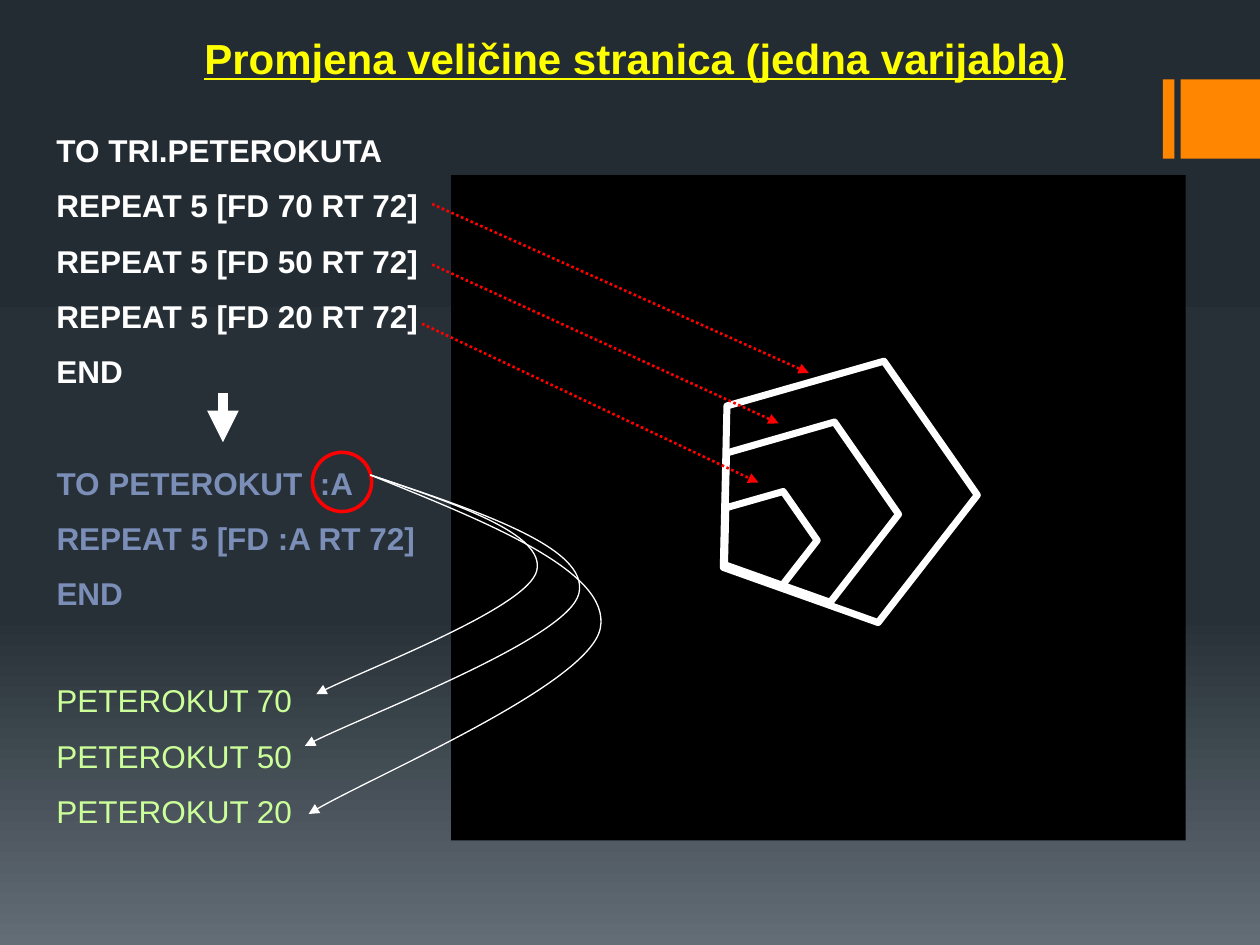
from copy import deepcopy

from pptx import Presentation
from pptx.dml.color import RGBColor
from pptx.enum.dml import MSO_LINE
from pptx.enum.shapes import MSO_CONNECTOR, MSO_SHAPE
from pptx.enum.text import MSO_AUTO_SIZE, PP_ALIGN
from pptx.oxml.ns import qn
from pptx.oxml.xmlchemy import OxmlElement
from pptx.util import Inches, Pt

RECT, OVAL, PENTAGON = MSO_SHAPE.RECTANGLE, MSO_SHAPE.OVAL, MSO_SHAPE.REGULAR_PENTAGON
STRAIGHT, DOTTED = MSO_CONNECTOR.STRAIGHT, MSO_LINE.ROUND_DOT
GROW, CENTER, LEFT = MSO_AUTO_SIZE.SHAPE_TO_FIT_TEXT, PP_ALIGN.CENTER, PP_ALIGN.LEFT

WHITE = RGBColor(0xFF, 0xFF, 0xFF)
BLACK = RGBColor(0x00, 0x00, 0x00)
RED = RGBColor(0xFF, 0x00, 0x00)
ORANGE = RGBColor(0xFF, 0x86, 0x00)
YELLOW = RGBColor(0xFF, 0xFF, 0x00)
BLUE = RGBColor(0x7B, 0x8E, 0xB8)
GREEN = RGBColor(0xCC, 0xFF, 0x99)
SKY = [(0, RGBColor(0x24, 0x2C, 0x33)), (0.65, RGBColor(0x27, 0x30, 0x37)),
       (1, RGBColor(0x63, 0x6D, 0x76))]

COLS, ROWS = 100, 75
CELL = Inches(0.1)

CODE = {"name": "Arial", "size": Pt(18), "bold": True}
CALL = {**CODE, "bold": False}
TITLE = {**CODE, "size": Pt(24), "underline": True}


def cells(*values):
    """Turn grid counts into lengths."""
    return [round(v * CELL) for v in values]


def shape(slide, kind, box, fill=None, line=None, width=0):
    """Add a preset shape in a grid box."""
    sp = slide.shapes.add_shape(kind, *cells(*box))
    sp.shadow.inherit = False
    style(sp, fill, line, width)
    return sp


def style(sp, fill, line, width):
    """Set the fill and outline, either of which may be empty."""
    for part, color in ((sp.fill, fill), (sp.line.fill, line)):
        if color is None:
            part.background()
        else:
            part.solid()
            part.fore_color.rgb = color
    if line is not None:
        sp.line.width = Pt(width)


def add_head(sp):
    """Put a triangle at the end of a line."""
    tail = OxmlElement("a:tailEnd")
    tail.set("type", "triangle")
    sp.line._get_or_add_ln().append(tail)


def arrow(slide, start, end, color, width, dash=None):
    """Add a straight arrow between two grid points."""
    cx = slide.shapes.add_connector(STRAIGHT, *cells(*start, *end))
    cx.line.color.rgb = color
    cx.line.width = Pt(width)
    if dash:
        cx.line.dash_style = dash
    add_head(cx)
    cx._element.spPr.append(OxmlElement("a:effectLst"))


def text(slide, box, lines, color, font, align=LEFT):
    """Add a block of equally spaced lines."""
    sp = slide.shapes.add_textbox(*cells(*box))
    tf = sp.text_frame
    tf.word_wrap = True
    tf.auto_size = GROW
    for i, line in enumerate(lines):
        p = tf.add_paragraph() if i else tf.paragraphs[0]
        p.alignment = align
        p.space_before = Pt(10 if i else 0)
        r = p.add_run()
        r.text = line
        for key, value in font.items():
            setattr(r.font, key, value)
        r.font.color.rgb = color


def curve(slide, start, out, turn, back, end):
    """Add a curved arrow that turns halfway between two handles."""
    lead = [(a + b) / 2 for a, b in zip(start, out)]
    apex = [(a + b) / 2 for a, b in zip(out, turn)]
    points = [cells(*pt) for pt in (lead, out, apex, turn, back, end)]
    fb = slide.shapes.build_freeform(*cells(*start))
    fb.add_line_segments(points, close=False)
    sp = fb.convert_to_shape()
    sp.shadow.inherit = False
    style(sp, None, WHITE, 0.75)
    add_head(sp)
    path = next(sp._element.iter(qn("a:path")))
    legs = path.findall(qn("a:lnTo"))
    for i in range(0, len(legs), 3):
        bend = OxmlElement("a:cubicBezTo")
        for leg in legs[i:i + 3]:
            bend.append(leg[0])
            path.remove(leg)
        path.append(bend)


def background(slide):
    """Paint the vertical gradient."""
    fill = slide.background.fill
    fill.gradient()
    fill.gradient_angle = 270
    stops = next(slide.element.iter(qn("a:gsLst")))
    stops.append(deepcopy(stops[-1]))
    for stop, (position, color) in zip(fill.gradient_stops, SKY):
        stop.position = position
        stop.color.rgb = color


def accent(slide, x, y, w, h):
    """Draw the narrow bar and the square at the right edge."""
    shape(slide, RECT, (x, y, 0.9, h), ORANGE)
    shape(slide, RECT, (x + w - h, y, h, h), ORANGE)


def drawing(slide, x, y, w, h):
    """Draw the black screen with three nested pentagons."""
    shape(slide, RECT, (x, y, w, h), BLACK)
    for dx, dy, pw, ph in ((20.5, 14.2, 21.1, 19.7), (20.9, 19.2, 14.5, 13.6),
                           (21.3, 24.9, 7.7, 7.2)):
        sp = shape(slide, PENTAGON, (x + dx, y + dy, pw, ph), None, WHITE, 4)
        sp.rotation = 19.6


def listings(slide, x, y, w, h):
    """Write the three code blocks and the step between the first two."""
    sides = (70, 50, 20)
    text(slide, (x, y, w, 22.1),
         ["TO TRI.PETEROKUTA", *(f"REPEAT 5 [FD {a} RT 72]" for a in sides), "END"],
         WHITE, CODE)
    text(slide, (x, y + 26.4, w + 3.9, 13),
         ["TO PETEROKUT  :A", "REPEAT 5 [FD :A RT 72]", "END"], BLUE, CODE)
    text(slide, (x, y + h - 13, w, 13), [f"PETEROKUT {a}" for a in sides], GREEN, CALL)
    arrow(slide, (x + 14.2, y + 21.3), (x + 14.2, y + 25.2), WHITE, 6)
    shape(slide, OVAL, (x + 21.3, y + 26, 4.7, 4.7), None, RED, 2)


def pointers(slide, x, y):
    """Link code lines to pentagons and the parameter to its values."""
    for start, end in (((4.9, 0), (34.8, 13.4)), ((4.9, 4.8), (32.4, 17.4)),
                       ((4.1, 9.5), (30.8, 22.1))):
        arrow(slide, (x + start[0], y + start[1]), (x + end[0], y + end[1]),
              RED, 1.5, DOTTED)
    origin = (0, 21.5)
    for handles in (((13.9, 26.2), (12.5, 32), (-1.4, 37.3), (-4.3, 38.9)),
                    ((17.4, 27.3), (15.7, 34.5), (-1.6, 41), (-5.2, 43)),
                    ((19.1, 29.2), (17.4, 38.1), (-1, 45.9), (-4.9, 48.4))):
        curve(slide, *((x + dx, y + dy) for dx, dy in (origin, *handles)))


def main():
    """Build and save the slide."""
    prs = Presentation()
    prs.slide_width, prs.slide_height = cells(COLS, ROWS)
    slide = prs.slides.add_slide(prs.slide_layouts[6])
    background(slide)
    accent(slide, 92.3, 6.3, 7.7, 6.3)
    drawing(slide, 35.8, 13.9, 58.3, 52.8)
    listings(slide, 3.5, 9.9, 32.3, 56.7)
    pointers(slide, 29.4, 16.2)
    text(slide, (6.7, 2.1, 87.4, 5), ["Promjena veličine stranica (jedna varijabla)"],
         YELLOW, TITLE, CENTER)
    prs.save("out.pptx")


if __name__ == "__main__":
    main()
